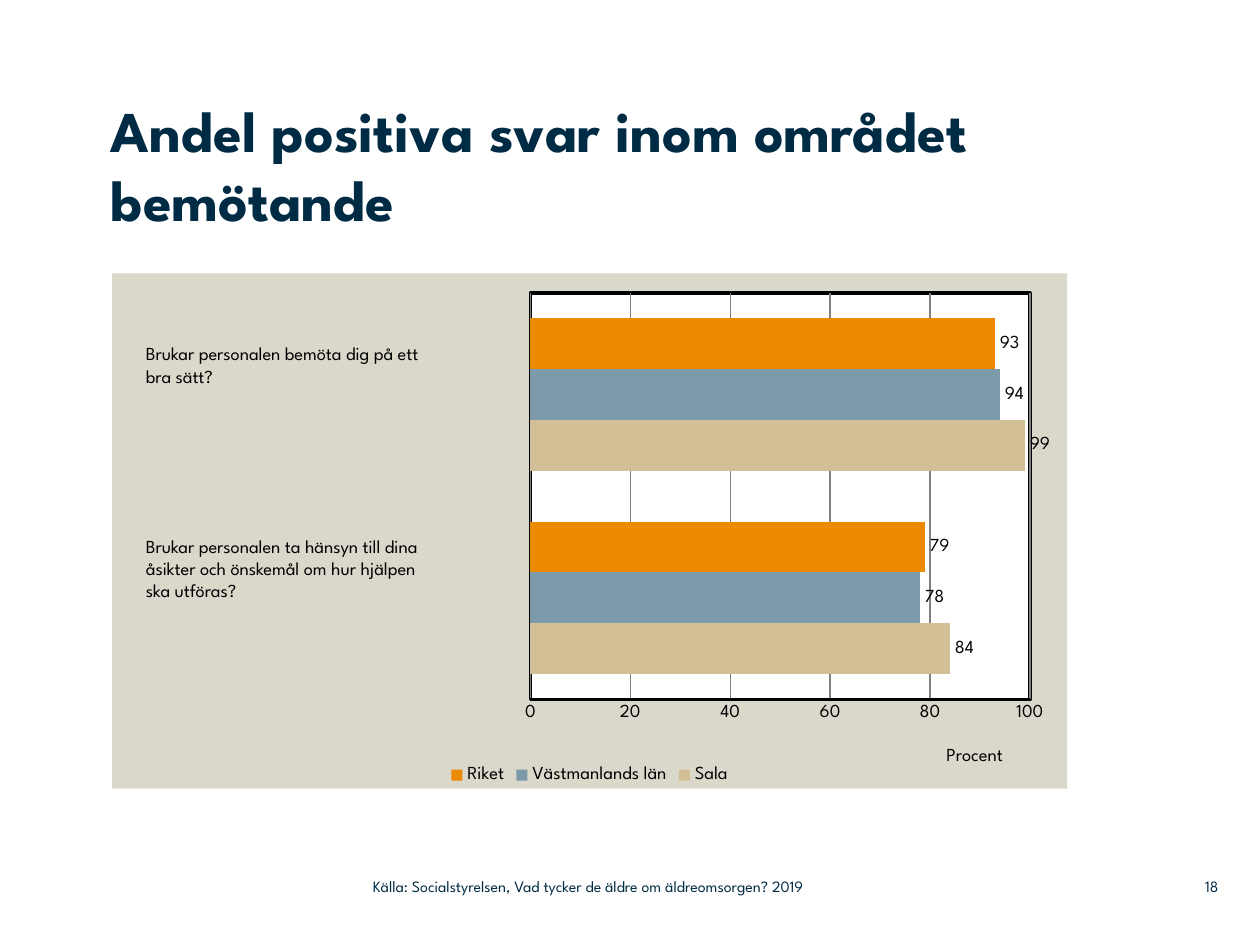
from lxml import etree
from pptx import Presentation
from pptx.chart.data import CategoryChartData
from pptx.dml.color import RGBColor
from pptx.enum import chart as ch, text
from pptx.oxml import parse_xml
from pptx.oxml.ns import nsdecls, qn
from pptx.util import Inches, Pt

FONT = "League Spartan"
NAVY = RGBColor(0x00, 0x2B, 0x45)
BLACK = RGBColor(0, 0, 0)
GRID_GREY = RGBColor(0x80, 0x80, 0x80)
CHART_BACK = RGBColor(0xDA, 0xD7, 0xCB)
WHITE = RGBColor(0xFF, 0xFF, 0xFF)
SAND = RGBColor(0xD3, 0xBF, 0x96)
BLUE_GREY = RGBColor(0x7D, 0x9A, 0xAA)
ORANGE = RGBColor(0xED, 0x8B, 0x00)


def style(font, size, color, bold=False):
    font.name, font.size, font.bold = FONT, Pt(size), bold
    font.color.rgb = color


def area_format(fill, line):
    """Chart-area formatting with a solid fill and the given a:ln content."""
    return parse_xml(
        f'<c:spPr {nsdecls("c", "a")}><a:solidFill><a:srgbClr val="{fill}"/></a:solidFill>{line}</c:spPr>')


prs = Presentation()
prs.slide_width, prs.slide_height = Inches(10), Inches(7.5)
slide = prs.slides.add_slide(prs.slide_layouts[5])

title = slide.shapes.title
title.left, title.top, title.width, title.height = (Inches(n) for n in (0.88, 0.75, 7.6, 1.42))
frame = title.text_frame
frame.text = "Andel positiva svar inom området bemötande"
frame.margin_left = frame.margin_right = frame.margin_top = frame.margin_bottom = 0
frame.vertical_anchor = text.MSO_ANCHOR.TOP
frame.auto_size = text.MSO_AUTO_SIZE.NONE
frame.paragraphs[0].alignment = text.PP_ALIGN.LEFT
style(frame.paragraphs[0].runs[0].font, 33, NAVY, bold=True)

# Shares of positive answers, listed from the bottom of the chart upwards
answers = [
    ("Sala", (84, 99), SAND),
    ("Västmanlands län", (78, 94), BLUE_GREY),
    ("Riket", (79, 93), ORANGE),
]
data = CategoryChartData()
data.categories = ["1", "2"]
for region, shares, _ in answers:
    data.add_series(region, shares)
chart = slide.shapes.add_chart(
    ch.XL_CHART_TYPE.BAR_CLUSTERED, Inches(0.89), Inches(2.17), Inches(7.58), Inches(4.09), data).chart
chart.has_title = False
style(chart.font, 10.5, BLACK)
chart.has_legend = True
chart.legend.position = ch.XL_LEGEND_POSITION.BOTTOM
chart.legend.include_in_layout = False
style(chart.legend.font, 10.5, BLACK)

bars = chart.plots[0]
bars.gap_width, bars.overlap = 100, 0
bars.vary_by_categories = False
for series, (_, _, color) in zip(bars.series, answers):
    series.format.fill.solid()
    series.format.fill.fore_color.rgb = color
    labels = series.data_labels
    labels.show_value = True
    labels.position = ch.XL_LABEL_POSITION.OUTSIDE_END
    style(labels.font, 10.5, BLACK)

chart.category_axis.visible = False
percent = chart.value_axis
percent.minimum_scale, percent.maximum_scale, percent.major_unit = 0, 100, 20
percent.major_tick_mark = percent.minor_tick_mark = ch.XL_TICK_MARK.NONE
percent.format.line.color.rgb = BLACK
percent.format.line.width = Pt(2)
percent.has_major_gridlines = True
percent.major_gridlines.format.line.color.rgb = GRID_GREY
percent.major_gridlines.format.line.width = Pt(0.75)
style(percent.tick_labels.font, 10.5, BLACK)
percent.axis_title.text_frame.text = "Procent"
style(percent.axis_title.text_frame.paragraphs[0].runs[0].font, 10.5, BLACK)

# Fixed places for the plot and the axis title, as fractions of the chart
plot_area = chart._chartSpace.chart.plotArea
axis_title = plot_area.find(qn("c:valAx")).find(qn("c:title"))
layouts = [
    (plot_area, 0, dict(layoutTarget="inner", xMode="edge", yMode="edge", x=0.438, y=0.038, w=0.523, h=0.789)),
    (axis_title, 1, dict(xMode="edge", yMode="edge", x=0.87, y=0.91)),
]
for parent, index, settings in layouts:
    for old in parent.findall(qn("c:layout")):
        parent.remove(old)
    layout = parse_xml(f'<c:layout {nsdecls("c")}><c:manualLayout/></c:layout>')
    for name, value in settings.items():
        etree.SubElement(layout[0], qn(f"c:{name}")).set("val", str(value))
    parent.insert(index, layout)

plot_area.append(area_format(
    WHITE, f'<a:ln w="{Pt(2)}"><a:solidFill><a:srgbClr val="{BLACK}"/></a:solidFill></a:ln>'))
chart._chartSpace.chart.addnext(area_format(CHART_BACK, "<a:ln><a:noFill/></a:ln>"))

questions = [
    (2.67, 0.45, "Brukar personalen bemöta dig på ett\nbra sätt?"),
    (4.2, 0.63, "Brukar personalen ta hänsyn till dina\nåsikter och önskemål om hur hjälpen\nska utföras?"),
]
for top, height, question in questions:
    frame = slide.shapes.add_textbox(Inches(1.06), Inches(top), Inches(3.02), Inches(height)).text_frame
    frame.word_wrap = True
    frame.auto_size = text.MSO_AUTO_SIZE.SHAPE_TO_FIT_TEXT
    frame.text = question
    for line in frame.paragraphs:
        style(line.runs[0].font, 10.5, BLACK)

footers = [
    (9.2, 0.47, "18", text.PP_ALIGN.RIGHT),
    (2.96, 4.43, "Källa: Socialstyrelsen, Vad tycker de äldre om äldreomsorgen? 2019", text.PP_ALIGN.LEFT),
]
for left, width, footer, alignment in footers:
    frame = slide.shapes.add_textbox(Inches(left), Inches(6.89), Inches(width), Inches(0.29)).text_frame
    frame.word_wrap = True
    frame.margin_left = frame.margin_right = frame.margin_top = frame.margin_bottom = 0
    frame.vertical_anchor = text.MSO_ANCHOR.MIDDLE
    frame.text = footer
    frame.paragraphs[0].alignment = alignment
    style(frame.paragraphs[0].runs[0].font, 9, NAVY)

prs.save("out.pptx")
